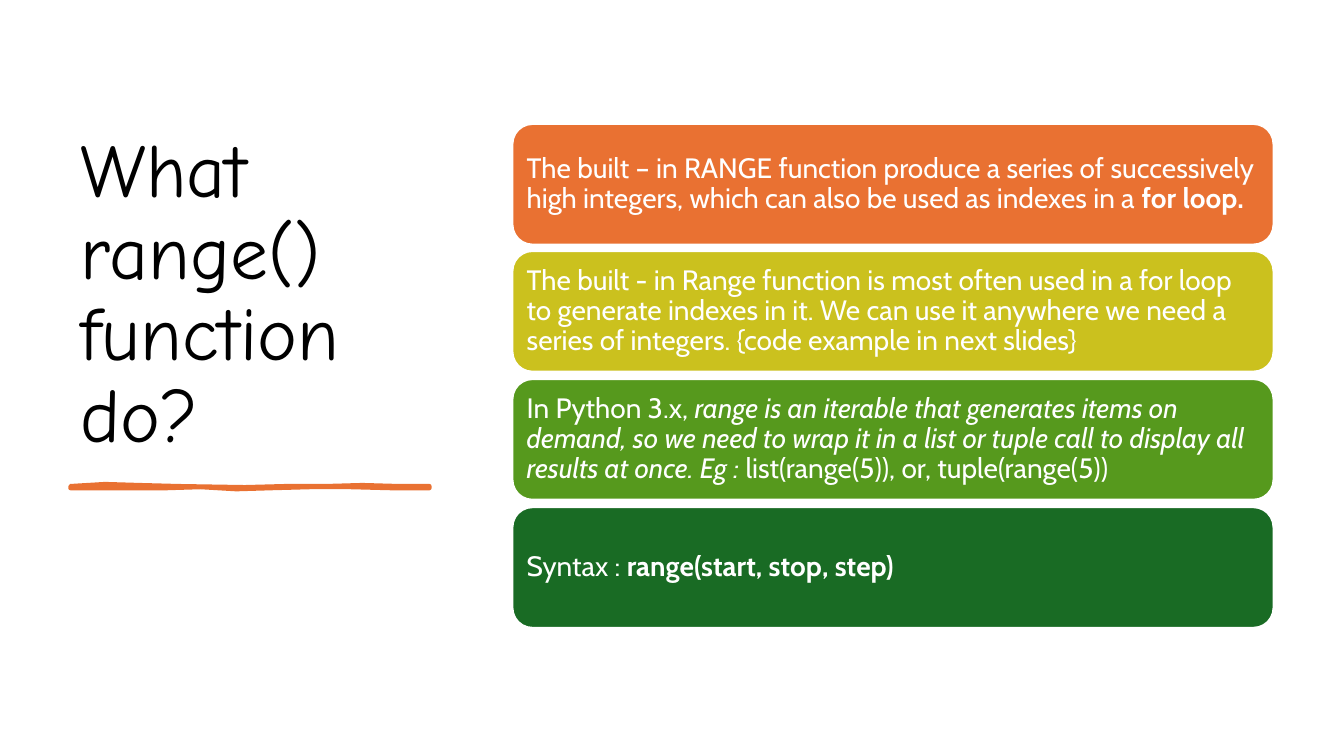
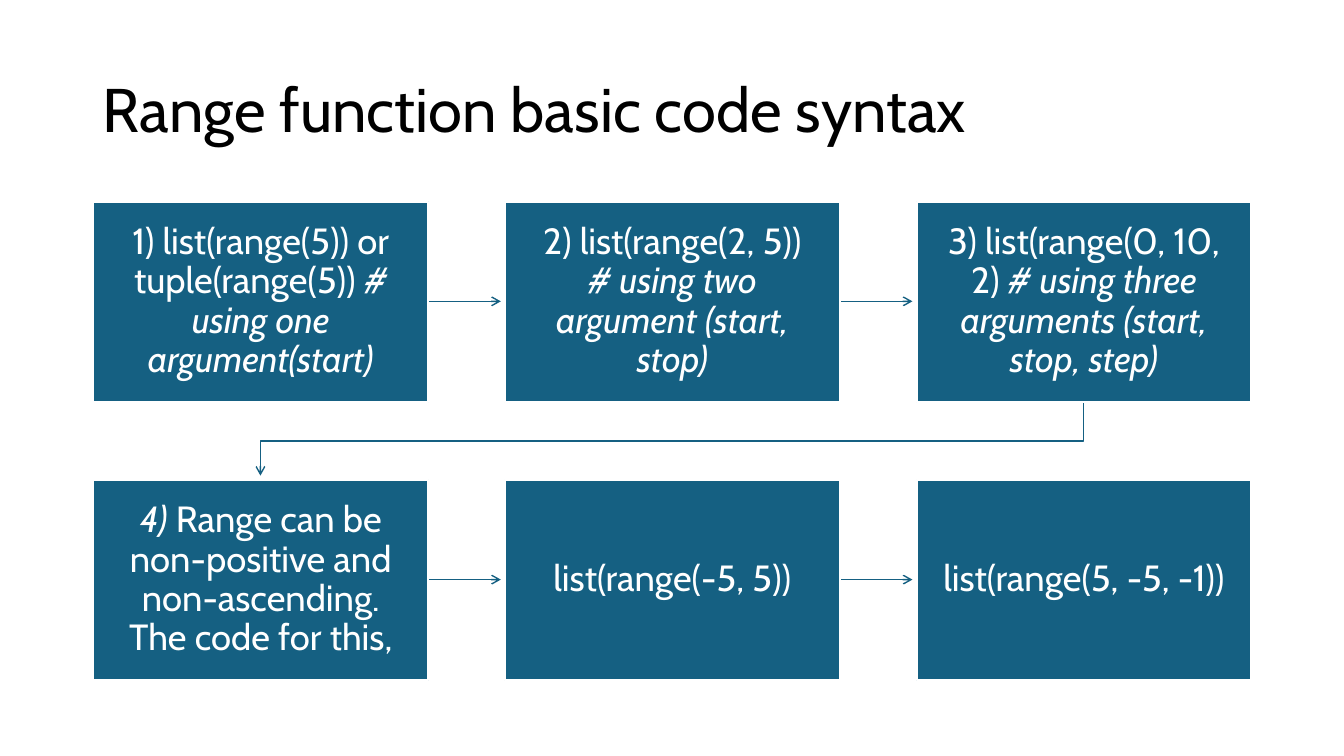
"""Build two slides on the range() function in Python."""
import pptx
import pptx.dml.color
import pptx.enum.shapes
import pptx.enum.text
import pptx.oxml
import pptx.oxml.ns
import pptx.util

PX = 9525
KIND = pptx.enum.shapes.MSO_SHAPE
ALIGN = pptx.enum.text.PP_ALIGN
ANCHOR = pptx.enum.text.MSO_ANCHOR
tint = pptx.dml.color.RGBColor.from_string


class Theme:
    ink = tint("000000")
    white = tint("FFFFFF")
    rust = tint("E97132")
    blue = tint("156082")
    bars = [rust, tint("CBC11E"), tint("56991D"), tint("196B24")]
    hand = {"name": "Comic Neue", "size": pptx.util.Pt(54)}
    head = {"name": "Cabin", "size": pptx.util.Pt(44)}
    body = {"name": "Cabin", "size": pptx.util.Pt(20)}
    card = {"name": "Cabin", "size": pptx.util.Pt(26)}
    edge = pptx.util.Pt(1.5)
    thin = pptx.util.Pt(1)
    bold = {"bold": True}
    slant = {"italic": True}


def write(shape, runs, face, color, pads, anchor, align=ALIGN.LEFT):
    frame = shape.text_frame
    sides = ("margin_left", "margin_top", "margin_right", "margin_bottom")
    form = {"word_wrap": True, "vertical_anchor": anchor}
    form.update(zip(sides, [pad * PX for pad in pads * 2]))
    for key, value in form.items():
        setattr(frame, key, value)
    para = frame.paragraphs[0]
    para.alignment = align
    para.line_spacing = 0.9
    for words, extra in runs:
        if words == "\n":
            para.add_line_break()
            continue
        run = para.add_run()
        run.text = words
        run.font.color.rgb = color
        for key, value in {**face, **extra}.items():
            setattr(run.font, key, value)


def paint(shape, fill, line, width):
    shape.shadow.inherit = False
    if fill is None:
        shape.fill.background()
    else:
        shape.fill.solid()
        shape.fill.fore_color.rgb = fill
    shape.line.color.rgb = line
    shape.line.width = width


deck = pptx.Presentation()
deck.slide_width, deck.slide_height = 1280 * PX, 720 * PX
blank = deck.slide_layouts[6]
first, second = [deck.slides.add_slide(blank).shapes for _ in range(2)]

titles = [
    (first, "What range() function do?", (67, 67, 375, 375), Theme.hand, ANCHOR.BOTTOM),
    (second, "Range function basic code syntax", (88, 38, 1104, 139), Theme.head, ANCHOR.MIDDLE),
]
for shapes, words, place, face, anchor in titles:
    box = shapes.add_textbox(*[n * PX for n in place])
    write(box, [(words, {})], face, Theme.ink, (10, 5), anchor)

upper = [(67, 463), (100, 461), (133, 462), (170, 463), (233, 464), (272, 463),
         (310, 463), (345, 462), (380, 463), (409, 463)]
lower = [(409, 465), (372, 465), (334, 464), (295, 464), (259, 465), (225, 466),
         (191, 464), (159, 465), (127, 465), (67, 465)]
pen = first.build_freeform(*upper[0], scale=PX)
pen.add_line_segments(upper[1:] + lower, close=True)
paint(pen.convert_to_shape(), Theme.rust, Theme.rust, pptx.util.Pt(3))

facts = [
    [("The built – in RANGE function produce a series of successively high integers, "
      "which can also be used as indexes in a ", {}), ("for loop.", Theme.bold)],
    [("The built - in Range function is most often used in a for loop to generate "
      "indexes in it. We can use it anywhere we need a series of integers. "
      "{code example in next slides}", {})],
    [("In Python 3.x, ", {}),
     ("range is an iterable that generates items on demand, so we need to wrap it in "
      "a list or tuple call to display all results at once. Eg : ", Theme.slant),
     ("list(range(5)), or, tuple(range(5))", {})],
    [("Syntax : ", {}), ("range(start, stop, step)", Theme.bold)],
]
for i, (runs, color) in enumerate(zip(facts, Theme.bars)):
    place = (488, 118 + i * 365 // 3, 725, 115)
    bar = first.add_shape(KIND.ROUNDED_RECTANGLE, *[n * PX for n in place])
    paint(bar, color, Theme.white, Theme.edge)
    write(bar, runs, Theme.body, Theme.white, (8, 8), ANCHOR.MIDDLE)

steps = [
    [("1) list(range(5)) or tuple(range(5)) ", {}),
     ("# using one argument(start)", Theme.slant)],
    [("2) list(range(2, 5))", {}), ("\n", {}),
     ("# using two argument (start, stop)", Theme.slant)],
    [("3) list(range(0, 10, 2) ", {}),
     ("# using three arguments (start, stop, step)", Theme.slant)],
    [("4) ", Theme.slant),
     ("Range can be non-positive and non-ascending. The code for this,", {})],
    [("list(range(-5, 5))", {})],
    [("list(range(5, -5, -1))", {})],
]
wide, high = 319, 191
spots = [(89 + col * 392, 192 + row * 265) for row in range(2) for col in range(3)]

pen = second.build_freeform(1032, 383, scale=PX)
pen.add_line_segments([(1032, 420), (248, 420), (248, 453)], close=False)
turn = pen.convert_to_shape()
paint(turn, None, Theme.blue, Theme.thin)
links = [turn]
for i, (left, top) in enumerate(spots):
    if i % 3 < 2:
        mid = top + high // 2
        ends = (left + wide, mid, left + wide + 69, mid)
        link = second.add_connector(
            pptx.enum.shapes.MSO_CONNECTOR.STRAIGHT, *[n * PX for n in ends])
        link.line.color.rgb = Theme.blue
        link.line.width = Theme.thin
        links.append(link)
for link in links:
    tip = pptx.oxml.parse_xml(
        "<a:tailEnd %s type='arrow'/>" % pptx.oxml.ns.nsdecls("a"))
    link.line._get_or_add_ln().append(tip)
for link in links[1:]:
    none = pptx.oxml.parse_xml("<a:effectLst %s/>" % pptx.oxml.ns.nsdecls("a"))
    link._element.spPr.append(none)

for runs, (left, top) in zip(steps, spots):
    card = second.add_shape(KIND.RECTANGLE, *[n * PX for n in (left, top, wide, high)])
    paint(card, Theme.blue, Theme.white, Theme.edge)
    write(card, runs, Theme.card, Theme.white, (15, 16), ANCHOR.MIDDLE, ALIGN.CENTER)

deck.save("out.pptx")
